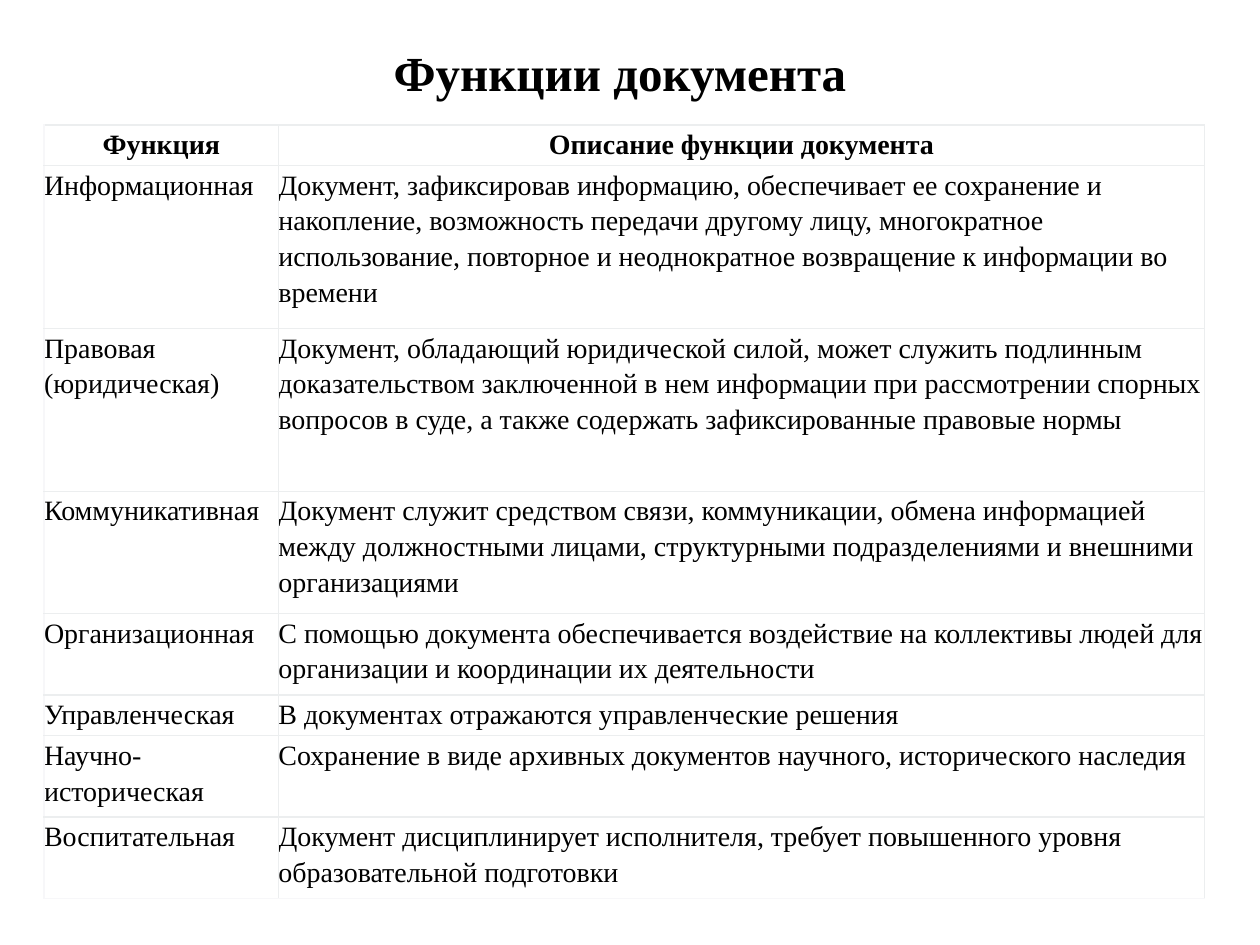
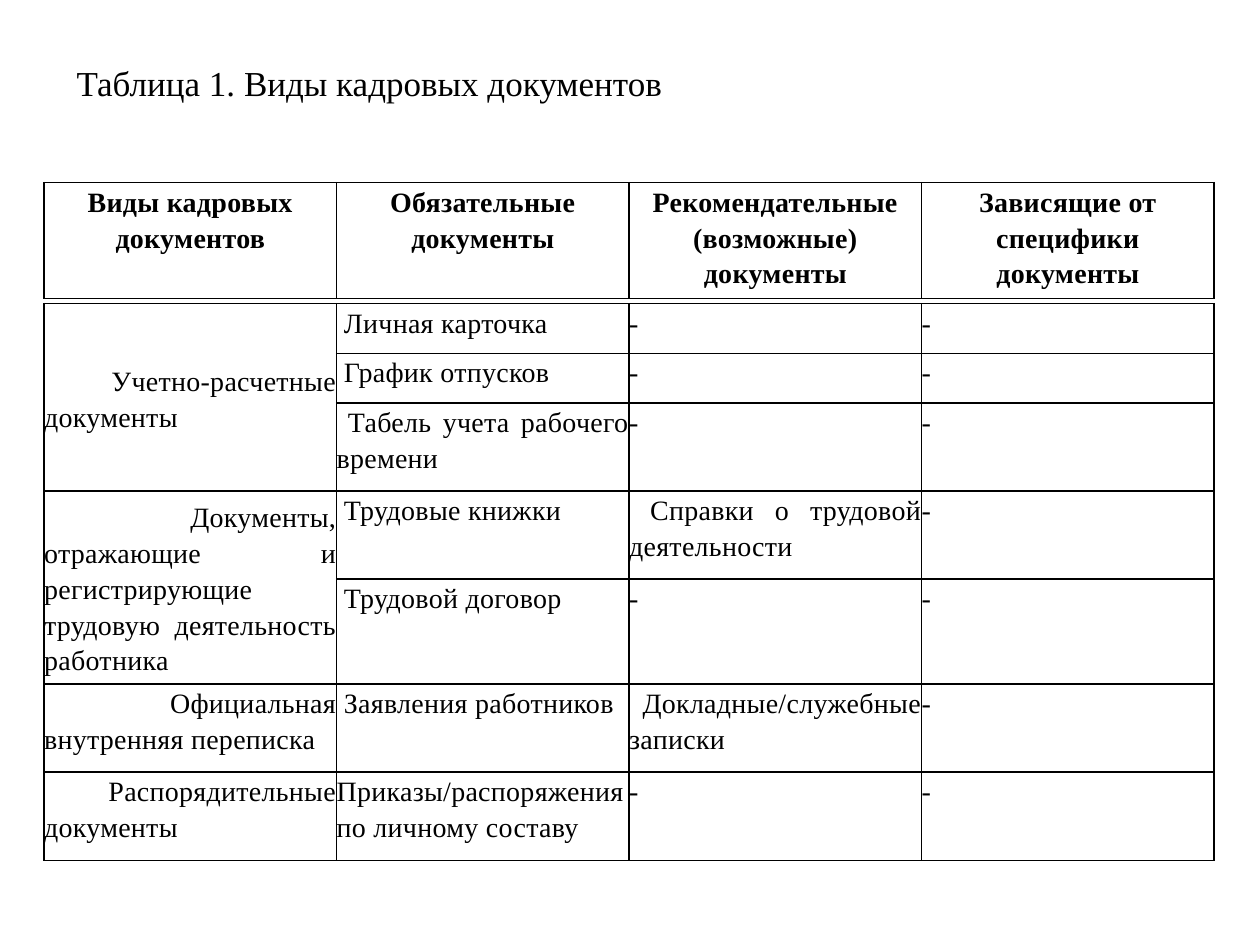
import lxml.etree
import pptx
import pptx.dml.color
import pptx.enum.text
import pptx.oxml.ns
import pptx.util

# Shared look
COLOURS = {"ink": "000000", "rule": "ECEEEF", "edge": "F7F7F9"}
ALIGN = pptx.enum.text.PP_ALIGN
ANCHOR = pptx.enum.text.MSO_ANCHOR
FONT = {"name": "Times New Roman", "bold": False}
MAIN_TITLE = {**FONT, "size": pptx.util.Pt(28), "bold": True}
CAPTION = {**FONT, "size": pptx.util.Pt(20)}
BODY = {**FONT, "size": pptx.util.Pt(16)}
HEADING = {**BODY, "bold": True}
NO_MARGINS = dict.fromkeys(
    ["margin_left", "margin_right", "margin_top", "margin_bottom"], 0)

deck = pptx.Presentation()
deck.slide_width = pptx.util.Inches(10)
deck.slide_height = pptx.util.Inches(7.5)
BLANK = deck.slide_layouts[6]

# Lengths are percentages of the slide's width and height
ACROSS = deck.slide_width / 100
DOWN = deck.slide_height / 100
LEFT = 3.5


def write_text(frame, text, font, align, line_spacing=None, tracking=0):
    para = frame.paragraphs[0]
    para.alignment = align
    para.line_spacing = line_spacing
    span = para.add_run()
    span.text = text
    for name, value in font.items():
        setattr(span.font, name, value)
    span.font.color.rgb = pptx.dml.color.RGBColor.from_string(COLOURS["ink"])
    if tracking:
        span.font._element.set("spc", str(tracking))


def add_table(page, top, widths, heights, rule, edge):
    """Add an unfilled table; edge colours its left and bottom sides."""
    table = page.shapes.add_table(
        len(heights), len(widths), int(LEFT * ACROSS), int(top * DOWN),
        int(sum(widths) * ACROSS), int(sum(heights) * DOWN)).table
    table.first_row = table.horz_banding = False
    for column, width in zip(table.columns, widths):
        column.width = int(width * ACROSS)
    for row, height in zip(table.rows, heights):
        row.height = int(height * DOWN)
    for r in range(len(heights)):
        for c in range(len(widths)):
            cell = table.cell(r, c)
            for name, value in NO_MARGINS.items():
                setattr(cell, name, value)
            cell.fill.background()
            sides = {"L": rule if c else edge, "R": rule, "T": rule,
                     "B": edge if r == len(heights) - 1 else rule}
            properties = cell._tc.get_or_add_tcPr()
            for place, (side, colour) in enumerate(sides.items()):
                line = lxml.etree.Element(
                    pptx.oxml.ns.qn(f"a:ln{side}"), w=str(pptx.util.Pt(1)))
                fill = lxml.etree.SubElement(
                    line, pptx.oxml.ns.qn("a:solidFill"))
                lxml.etree.SubElement(
                    fill, pptx.oxml.ns.qn("a:srgbClr"), val=COLOURS[colour])
                properties.insert(place, line)
    return table


# Both pages with their titles
titles = [
    ("Функции документа", MAIN_TITLE, ALIGN.CENTER, (16.9, 3.87, 64.6, 7.6)),
    ("Таблица 1. Виды кадровых документов", CAPTION, ALIGN.LEFT,
     (5.1, 5.87, 89, 9.87)),
]
pages = []
for text, font, align, (left, top, width, height) in titles:
    page = deck.slides.add_slide(BLANK)
    box = page.shapes.add_textbox(
        int(left * ACROSS), int(top * DOWN),
        int(width * ACROSS), int(height * DOWN))
    box.text_frame.word_wrap = True
    write_text(box.text_frame, text, font, align)
    pages.append(page)
functions_page, kinds_page = pages

# Functions of a document: row height in text lines, name, description
functions = [
    (1, "Функция", "Описание функции документа"),
    (4, "Информационная",
     "Документ, зафиксировав информацию, обеспечивает ее сохранение и "
     "накопление, возможность передачи другому лицу, многократное "
     "использование, повторное и неоднократное возвращение к информации "
     "во времени"),
    (4, "Правовая (юридическая)",
     "Документ, обладающий юридической силой, может служить подлинным "
     "доказательством заключенной в нем информации при рассмотрении спорных "
     "вопросов в суде, а также содержать зафиксированные правовые нормы"),
    (3, "Коммуникативная",
     "Документ служит средством связи, коммуникации, обмена информацией "
     "между должностными лицами, структурными подразделениями и внешними "
     "организациями"),
    (2, "Организационная",
     "С помощью документа обеспечивается воздействие на коллективы людей для "
     "организации и координации их деятельности"),
    (1, "Управленческая", "В документах отражаются управленческие решения"),
    (2, "Научно-историческая",
     "Сохранение в виде архивных документов научного, исторического наследия"),
    (2, "Воспитательная",
     "Документ дисциплинирует исполнителя, требует повышенного уровня "
     "образовательной подготовки"),
]
LINE = 4.31
table = add_table(functions_page, 13.2, [18.6, 73.5],
                  [lines * LINE for lines, *_ in functions], "rule", "edge")
for r, (_, *texts) in enumerate(functions):
    for c, text in enumerate(texts):
        font, align = (BODY, ALIGN.LEFT) if r else (HEADING, ALIGN.CENTER)
        write_text(table.cell(r, c).text_frame, text, font, align, 1.15)

# Kinds of personnel documents: heading table
QUARTERS = [23.22] * 4
headings = ["Виды кадровых документов", "Обязательные документы",
            "Рекомендательные (возможные) документы",
            "Зависящие от специфики документы"]
table = add_table(kinds_page, 19.33, QUARTERS, [12.27], "ink", "ink")
for c, text in enumerate(headings):
    write_text(table.cell(0, c).text_frame, text, HEADING, ALIGN.CENTER,
               1.15, 20)

# Kinds of personnel documents: body table, None continues the cell above
SHORT, TALL, TALLEST = 5.25, 9.33, 11.1
kinds = [
    (SHORT, " Учетно-расчетные документы", " Личная карточка", "-"),
    (SHORT, None, " График отпусков", "-"),
    (TALL, None, " Табель учета рабочего времени", "-"),
    (TALL, " Документы, отражающие и регистрирующие трудовую деятельность "
     "работника", " Трудовые книжки", " Справки о трудовой деятельности"),
    (TALLEST, None, " Трудовой договор", "-"),
    (TALL, " Официальная внутренняя переписка", " Заявления работников",
     " Докладные/служебные записки"),
    (TALL, " Распорядительные документы",
     "Приказы/распоряжения по личному составу", "-"),
]
table = add_table(kinds_page, 32.13, QUARTERS,
                  [height for height, *_ in kinds], "ink", "ink")
for first, last in [(0, 2), (3, 4)]:
    table.cell(first, 0).merge(table.cell(last, 0))
    table.cell(first, 0).vertical_anchor = ANCHOR.MIDDLE
for r, (_, *texts) in enumerate(kinds):
    for c, text in enumerate([*texts, "-"]):
        if text:
            write_text(table.cell(r, c).text_frame, text, BODY,
                       ALIGN.JUSTIFY, 1.15, 20)

deck.save("out.pptx")
